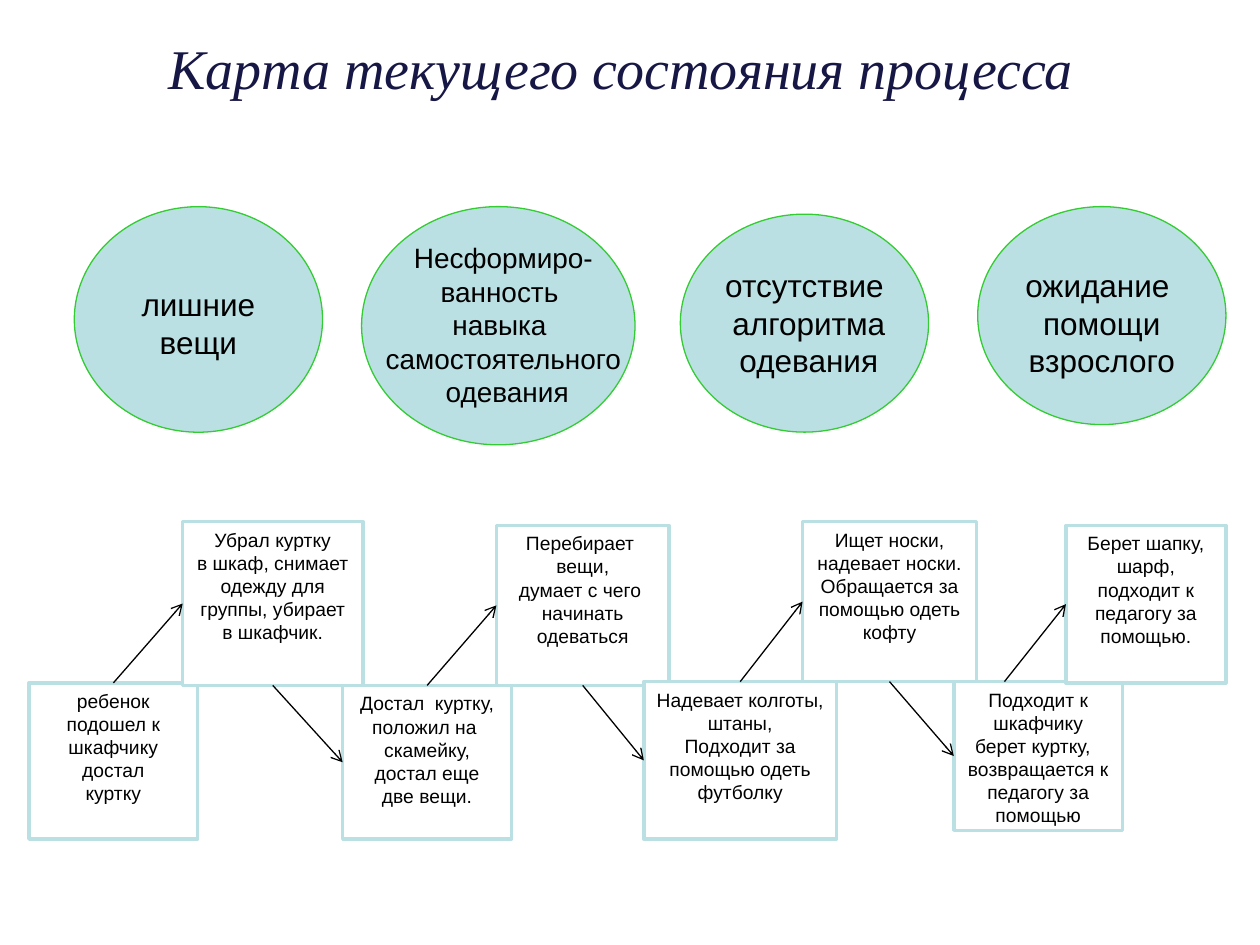
from lxml import etree
from pptx import Presentation
from pptx import util as u
from pptx.dml.color import RGBColor
from pptx.enum import shapes, text
from pptx.oxml import ns

PALE, GREEN, BLACK, WHITE, NAVY = "BBE0E3", "33CC33", "000000", "FFFFFF", "171745"


def paint(target, colour):
    """Give a fill, or the fill of a line or font, one solid colour."""
    target.solid()
    target.fore_color.rgb = RGBColor.from_string(colour)


def write(frame, lines, size, colour=BLACK, font="Arial", italic=False):
    """Fill a text frame with centred paragraphs."""
    for index, line in enumerate(lines):
        para = frame.paragraphs[0] if index == 0 else frame.add_paragraph()
        para.alignment = text.PP_ALIGN.CENTER
        span = para.add_run()
        span.text = line
        span.font.size = u.Pt(size)
        span.font.name = font
        span.font.italic = italic
        paint(span.font.fill, colour)


deck = Presentation()
deck.slide_width, deck.slide_height = u.Inches(10), u.Inches(7.5)
page = deck.slides.add_slide(deck.slide_layouts[5])

title = page.shapes.title
title.left, title.top, title.width, title.height = map(u.Inches, (1.06, 0.21, 7.74, 0.64))
title.text_frame.word_wrap = False
title.text_frame.auto_size = text.MSO_AUTO_SIZE.NONE
title.text_frame.vertical_anchor = text.MSO_ANCHOR.MIDDLE
write(title.text_frame, ["Карта текущего состояния процесса"], 32, NAVY, "Times New Roman", True)

# Problems: ellipse frame, label frame (None: label inside the ellipse), size, lines
problems = [
    ((0.59, 1.64, 1.97, 1.79), None, 18, ["лишние", "вещи"]),
    ((2.87, 1.64, 2.17, 1.89), (2.95, 1.86, 2.09, 1.45), 16,
     ["Несформиро-", "ванность ", "навыка ", "самостоятельного", " одевания"]),
    ((5.4, 1.7, 1.97, 1.73), (5.62, 2.06, 1.53, 1.01), 18,
     ["отсутствие", " алгоритма", " одевания"]),
    ((7.76, 1.64, 1.97, 1.73), (8.03, 2.06, 1.43, 1.01), 18,
     ["ожидание ", "помощи", "взрослого"]),
]
for frame, label_frame, size, lines in problems:
    ellipse = page.shapes.add_shape(shapes.MSO_SHAPE.OVAL, *map(u.Inches, frame))
    ellipse.shadow.inherit = False
    paint(ellipse.fill, PALE)
    paint(ellipse.line.fill, GREEN)
    ellipse.line.width = u.Pt(0.75)
    label = ellipse
    if label_frame:
        label = page.shapes.add_textbox(*map(u.Inches, label_frame))
        label.text_frame.word_wrap = False
    else:
        label.text_frame.vertical_anchor = text.MSO_ANCHOR.MIDDLE
        label.text_frame.margin_top = u.Inches(0.1)
    write(label.text_frame, lines, size)

# Steps alternate between a lower and an upper row
steps = [
    ((0.23, 5.42, 1.34, 1.24), ["ребенок", "подошел к", "шкафчику", "достал", "куртку"]),
    ((1.45, 4.14, 1.43, 1.3),
     ["Убрал куртку", "в шкаф, снимает одежду для группы, убирает в шкафчик."]),
    ((2.72, 5.44, 1.34, 1.22),
     ["Достал  куртку, положил на ", "скамейку,", "достал еще", "две вещи."]),
    ((3.94, 4.17, 1.37, 1.27),
     ["Перебирает  вещи,", "думает с чего  начинать", "одеваться"]),
    ((5.11, 5.41, 1.53, 1.25),
     ["Надевает колготы, штаны,", "Подходит за помощью одеть футболку"]),
    ((6.37, 4.14, 1.38, 1.27),
     ["Ищет носки, надевает носки.", "Обращается за помощью одеть кофту"]),
    ((7.57, 5.41, 1.34, 1.18),
     ["Подходит к шкафчику берет куртку,  ", "возвращается к педагогу за помощью"]),
    ((8.46, 4.17, 1.27, 1.25), ["Берет шапку, шарф, подходит к педагогу за помощью."]),
]
boxes = []
for frame, lines in steps:
    box = page.shapes.add_shape(shapes.MSO_SHAPE.RECTANGLE, *map(u.Inches, frame))
    box.shadow.inherit = False
    paint(box.fill, WHITE)
    paint(box.line.fill, PALE)
    box.line.width = u.Pt(2)
    box.text_frame.word_wrap = True
    box.text_frame.vertical_anchor = text.MSO_ANCHOR.TOP
    write(box.text_frame, lines, 11)
    boxes.append(box)

# Each arrow runs from the facing edge of a step to the left side of the next
for index, (box, following) in enumerate(zip(boxes, boxes[1:])):
    rising = following.top < box.top
    share = 0.3 if following is boxes[-1] else 0.5
    arrow = page.shapes.add_connector(
        shapes.MSO_CONNECTOR.STRAIGHT,
        box.left + int(box.width * share),
        box.top if rising else box.top + box.height,
        following.left,
        following.top + following.height // 2,
    )
    paint(arrow.line.fill, BLACK)
    arrow.line.width = u.Pt(0.75)
    etree.SubElement(arrow.line._get_or_add_ln(), ns.qn("a:tailEnd"), type="arrow")
    etree.SubElement(arrow._element.spPr, ns.qn("a:effectLst"))

deck.save("out.pptx")
